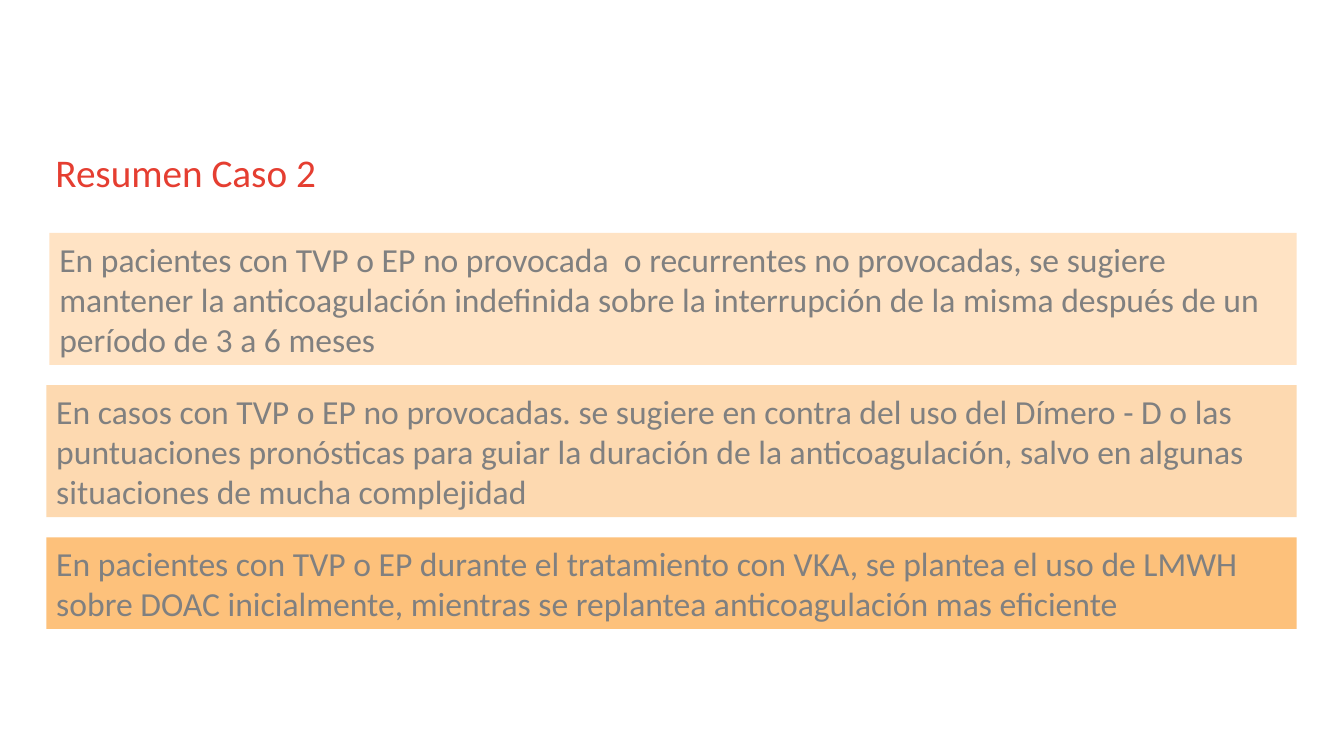
"""Build the summary slide for case 2: a title above three stacked bands."""
from dataclasses import dataclass

from pptx import Presentation
from pptx.dml.color import RGBColor
from pptx.enum.shapes import MSO_SHAPE
from pptx.enum.text import MSO_ANCHOR, MSO_AUTO_SIZE, PP_ALIGN
from pptx.util import Inches, Pt

RECTANGLE = MSO_SHAPE.RECTANGLE
TOP, MIDDLE = MSO_ANCHOR.TOP, MSO_ANCHOR.MIDDLE
NO_AUTOFIT, GROW = MSO_AUTO_SIZE.NONE, MSO_AUTO_SIZE.SHAPE_TO_FIT_TEXT
LEFT = PP_ALIGN.LEFT

TITLE = "Resumen Caso 2"
BANDS = [
    {"text": "En pacientes con TVP o EP no provocada  o recurrentes no provocadas, "
             "se sugiere mantener la anticoagulación indefinida sobre la interrupción "
             "de la misma después de un período de 3 a 6 meses",
     "lines": 3, "fill": "FFE3C4", "left": 0.49},
    {"text": "En casos con TVP o EP no provocadas. se sugiere en contra del uso del "
             "Dímero - D o las puntuaciones pronósticas para guiar la duración de la "
             "anticoagulación, salvo en algunas situaciones de mucha complejidad",
     "lines": 3, "fill": "FDD9B0", "left": 0.46},
    {"text": "En pacientes con TVP o EP durante el tratamiento con VKA, se plantea el "
             "uso de LMWH sobre DOAC inicialmente, mientras se replantea "
             "anticoagulación mas eficiente",
     "lines": 2, "fill": "FDC17B", "left": 0.46},
]

SLIDE_WIDTH, SLIDE_HEIGHT = 13.33, 7.5
TITLE_BOX = (0.46, 1.47, 12, 0.78)
TITLE_INDENT = 0.09
BANDS_TOP, BANDS_RIGHT, BAND_GAP = 2.31, 12.86, 0.2
LINE_HEIGHT, BAND_PADDING = 0.4, 0.11


@dataclass(frozen=True)
class Theme:
    """Hold the slide's font, type sizes and text colours."""
    font: str = "Calibri"
    title_size: int = 28
    band_size: int = 24
    title_color: str = "E53E31"
    band_color: str = "808080"


THEME = Theme()


def write(frame, text, size, color, anchor, autofit):
    """Put one left-aligned paragraph in a text frame."""
    frame.text = text
    frame.word_wrap = True
    frame.auto_size = autofit
    frame.vertical_anchor = anchor
    paragraph = frame.paragraphs[0]
    paragraph.alignment = LEFT
    paragraph.line_spacing = 1.0
    paragraph.font.name = THEME.font
    paragraph.font.size = Pt(size)
    paragraph.font.color.rgb = RGBColor.from_string(color)


def add_title(slide):
    """Move and format the title placeholder."""
    title = slide.shapes.title
    title.left, title.top, title.width, title.height = map(Inches, TITLE_BOX)
    frame = title.text_frame
    write(frame, TITLE, THEME.title_size, THEME.title_color, TOP, NO_AUTOFIT)
    frame.margin_left = Inches(TITLE_INDENT)
    frame.margin_top = frame.margin_right = frame.margin_bottom = 0


def add_bands(slide):
    """Stack the bands, each as tall as its lines of text."""
    top = BANDS_TOP
    for band in BANDS:
        height = band["lines"] * LINE_HEIGHT + BAND_PADDING
        box = (band["left"], top, BANDS_RIGHT - band["left"], height)
        shape = slide.shapes.add_shape(RECTANGLE, *map(Inches, box))
        shape.shadow.inherit = False
        shape.fill.solid()
        shape.fill.fore_color.rgb = RGBColor.from_string(band["fill"])
        shape.line.fill.background()
        write(shape.text_frame, band["text"], THEME.band_size, THEME.band_color,
              MIDDLE, GROW)
        top += height + BAND_GAP


def main():
    """Create and save the presentation."""
    presentation = Presentation()
    presentation.slide_width = Inches(SLIDE_WIDTH)
    presentation.slide_height = Inches(SLIDE_HEIGHT)
    title_only = presentation.slide_layouts.get_by_name("Title Only")
    slide = presentation.slides.add_slide(title_only)
    add_title(slide)
    add_bands(slide)
    presentation.save("out.pptx")


if __name__ == "__main__":
    main()
